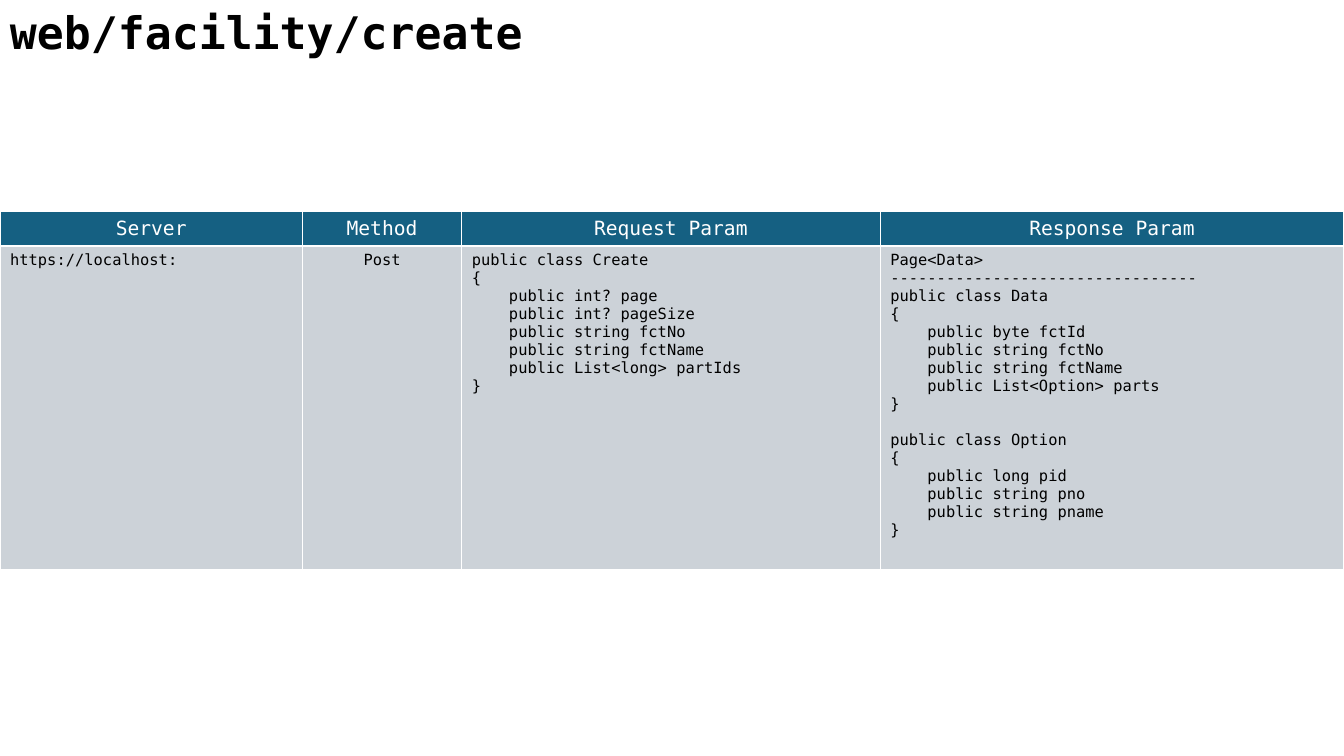
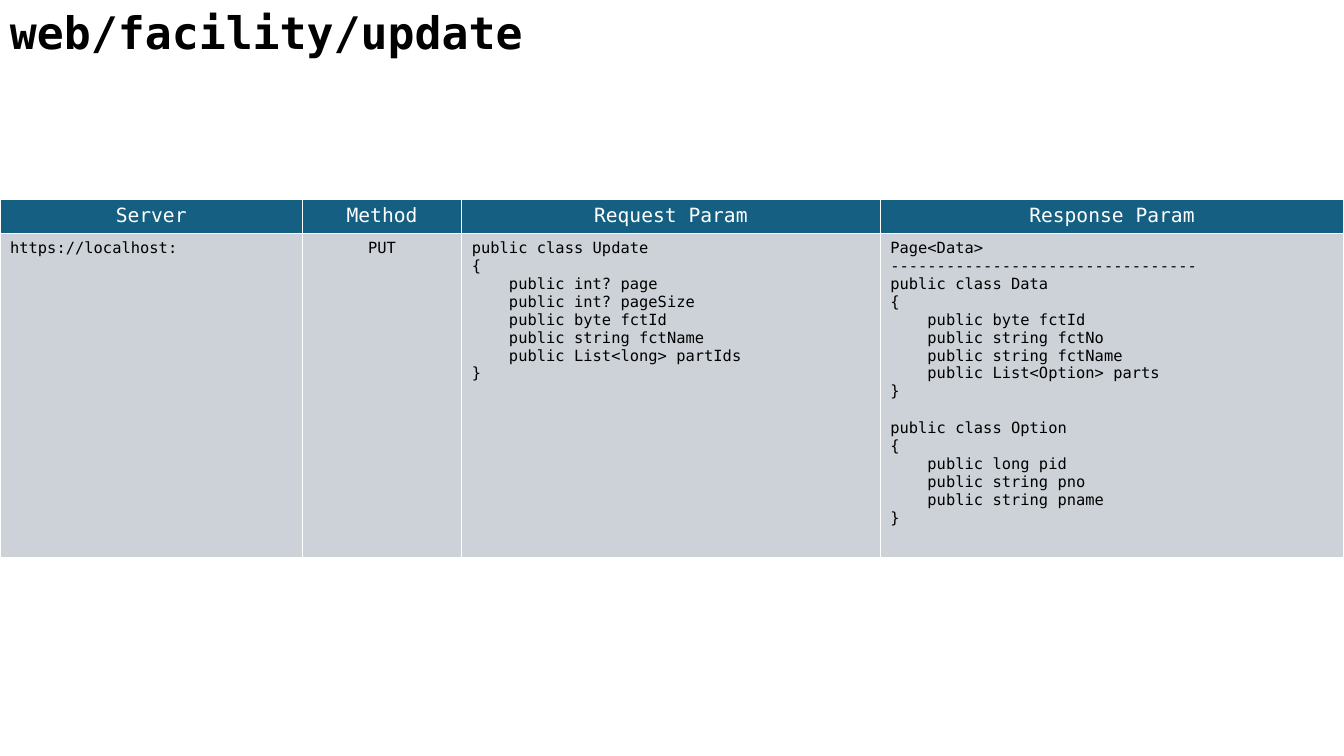
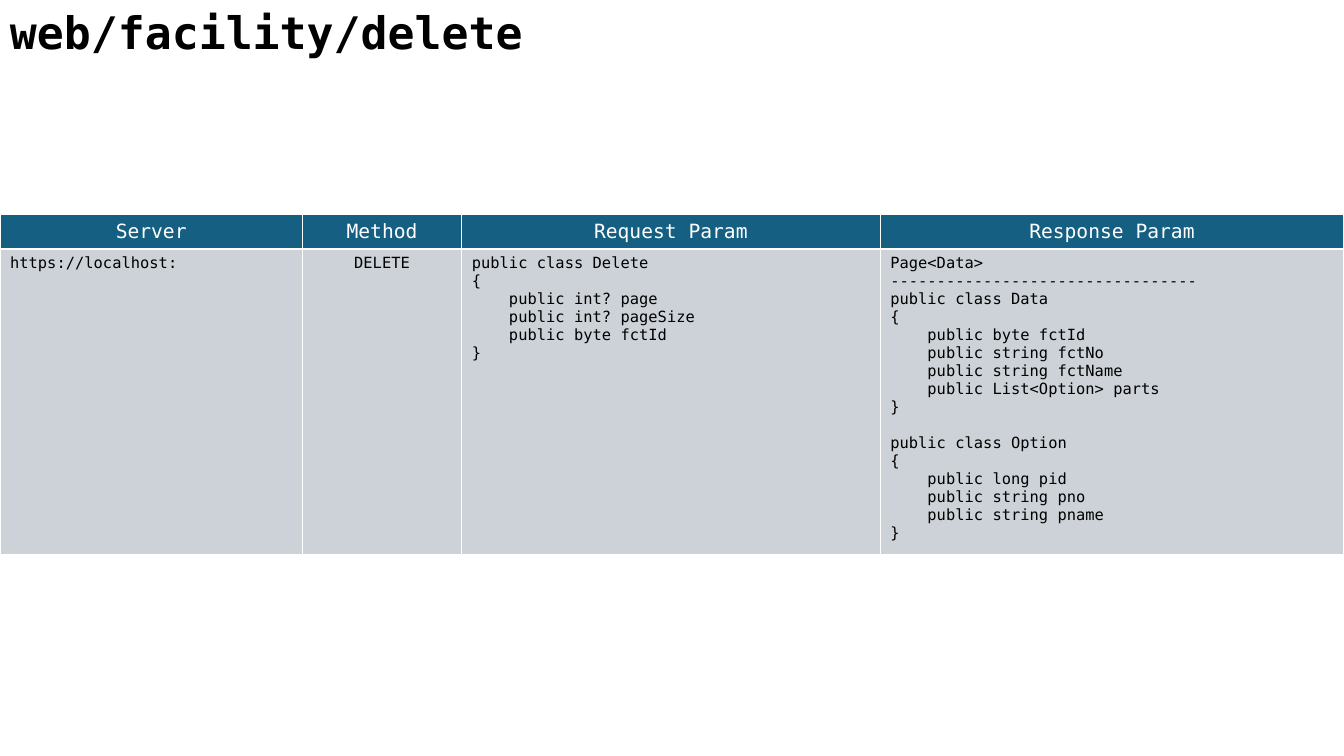
from lxml import etree
from pptx import Presentation
from pptx.dml.color import RGBColor
from pptx.enum.text import MSO_AUTO_SIZE, PP_ALIGN
from pptx.oxml.ns import qn
from pptx.util import Inches, Pt

CENTER = PP_ALIGN.CENTER
LEFT = PP_ALIGN.LEFT
FIT_SHAPE = MSO_AUTO_SIZE.SHAPE_TO_FIT_TEXT

COLORS = {
    "text": "000000",
    "header_text": "FFFFFF",
    "header_fill": "156082",
    "body_fill": "CCD2D8",
    "border": "FFFFFF",
}
HEADERS = ["Server", "Method", "Request Param", "Response Param"]
COLUMN_WIDTHS = [3, 1.58, 4.15, 4.6]
HEADER_HEIGHT = 0.34
SERVER = "https://localhost:"
PAGING = ["int? page", "int? pageSize"]


def class_code(name, fields):
    return [f"public class {name}", "{", *(f"    public {field}" for field in fields), "}"]


DATA_CLASS = class_code(
    "Data", ["byte fctId", "string fctNo", "string fctName", "List<Option> parts"])
OPTION_CLASS = class_code("Option", ["long pid", "string pno", "string pname"])
RESPONSE = [["Page<Data>", "-" * 33, *DATA_CLASS], OPTION_CLASS]

ENDPOINTS = [
    ("create", "Post", ["string fctNo", "string fctName", "List<long> partIds"], 2.1, 3.21),
    ("update", "PUT", ["byte fctId", "string fctName", "List<long> partIds"], 1.98, 3.21),
    ("delete", "DELETE", ["byte fctId"], 2.13, 3.03),
]


class ApiDeck:
    font_name = "DejaVu Sans Mono"
    title_size = 32
    header_size = 14
    code_size = 11
    block_gap = 13

    def __init__(self):
        self.presentation = Presentation()
        self.presentation.slide_width = Inches(13.33)
        self.presentation.slide_height = Inches(7.5)
        self.slide = None

    def new_slide(self):
        blank_layout = self.presentation.slide_layouts[6]
        self.slide = self.presentation.slides.add_slide(blank_layout)

    def style(self, paragraph, size, color, bold=False, align=LEFT):
        paragraph.alignment = align
        paragraph.font.name = self.font_name
        paragraph.font.size = Pt(size)
        paragraph.font.bold = bold
        paragraph.font.color.rgb = RGBColor.from_string(COLORS[color])

    def title(self, text):
        box = self.slide.shapes.add_textbox(0, 0, Inches(9.45), Inches(0.64))
        frame = box.text_frame
        frame.word_wrap = True
        frame.auto_size = FIT_SHAPE
        frame.text = text
        self.style(frame.paragraphs[0], self.title_size, "text", bold=True)

    def borders(self, cell):
        properties = cell._tc.get_or_add_tcPr()
        for side in ("a:lnL", "a:lnR", "a:lnT", "a:lnB"):
            line = etree.SubElement(properties, qn(side), w=str(Pt(1)))
            fill = etree.SubElement(line, qn("a:solidFill"))
            etree.SubElement(fill, qn("a:srgbClr"), val=COLORS["border"])

    def cell(self, cell, blocks, size, color, fill, align):
        self.borders(cell)
        cell.fill.solid()
        cell.fill.fore_color.rgb = RGBColor.from_string(COLORS[fill])
        cell.text = "\n".join(line for block in blocks for line in block)
        paragraphs = cell.text_frame.paragraphs
        for paragraph in paragraphs:
            self.style(paragraph, size, color, align=align)
        start = 0
        for block in blocks[:-1]:
            start += len(block)
            paragraphs[start].space_before = Pt(self.block_gap)

    def endpoint_table(self, method, request, top, body_height):
        table = self.slide.shapes.add_table(
            2, len(HEADERS), 0, Inches(top),
            Inches(sum(COLUMN_WIDTHS)), Inches(HEADER_HEIGHT + body_height)).table
        for row, height in zip(table.rows, (HEADER_HEIGHT, body_height)):
            row.height = Inches(height)
        contents = [[[SERVER]], [[method]], [request], RESPONSE]
        for index, (header, width, blocks) in enumerate(zip(HEADERS, COLUMN_WIDTHS, contents)):
            table.columns[index].width = Inches(width)
            self.cell(table.cell(0, index), [[header]], self.header_size,
                      "header_text", "header_fill", CENTER)
            self.cell(table.cell(1, index), blocks, self.code_size, "text", "body_fill",
                      CENTER if header == "Method" else LEFT)


def main():
    deck = ApiDeck()
    for action, method, fields, top, body_height in ENDPOINTS:
        deck.new_slide()
        deck.title(f"web/facility/{action}")
        request = class_code(action.capitalize(), PAGING + fields)
        deck.endpoint_table(method, request, top, body_height)
    deck.presentation.save("out.pptx")


if __name__ == "__main__":
    main()
